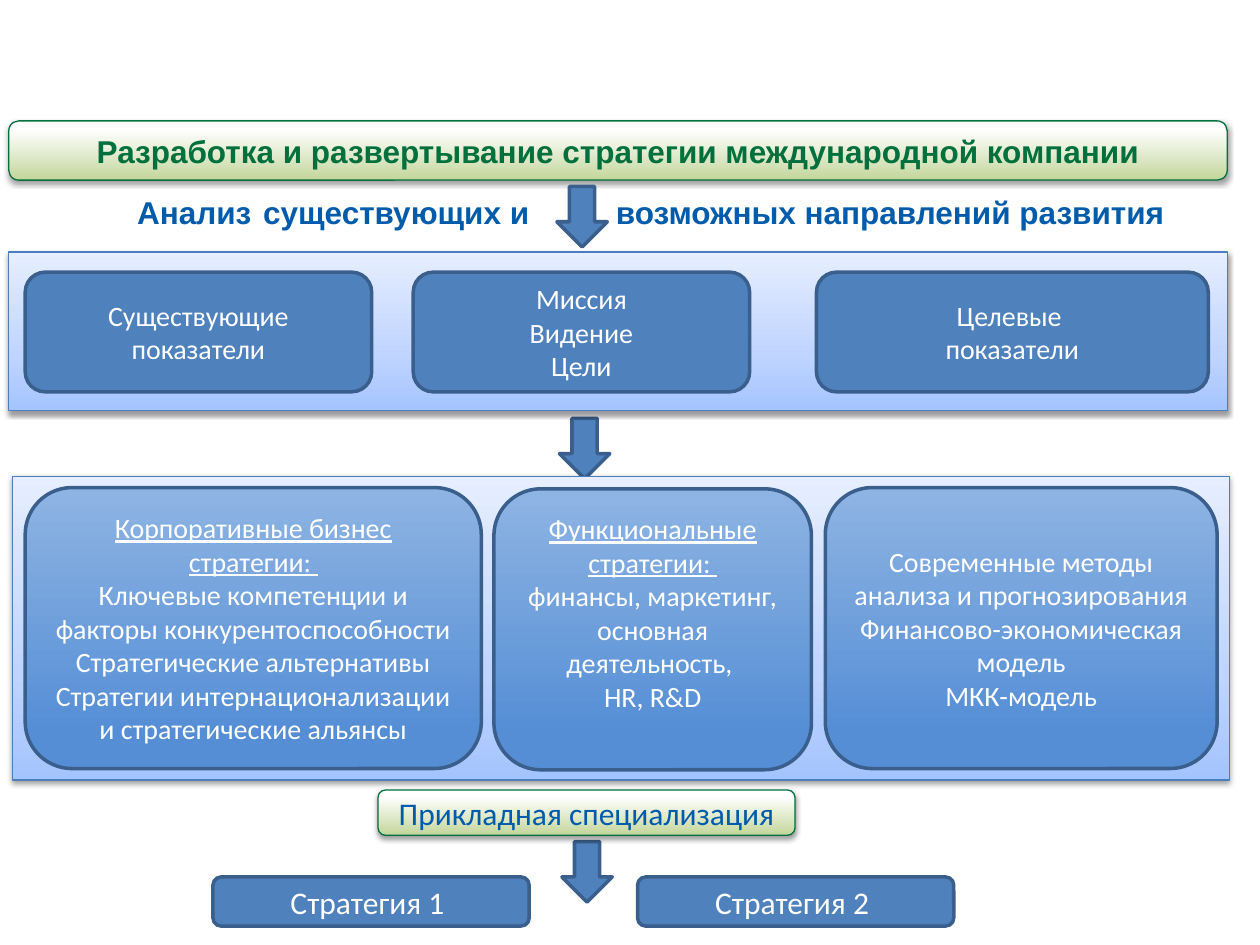
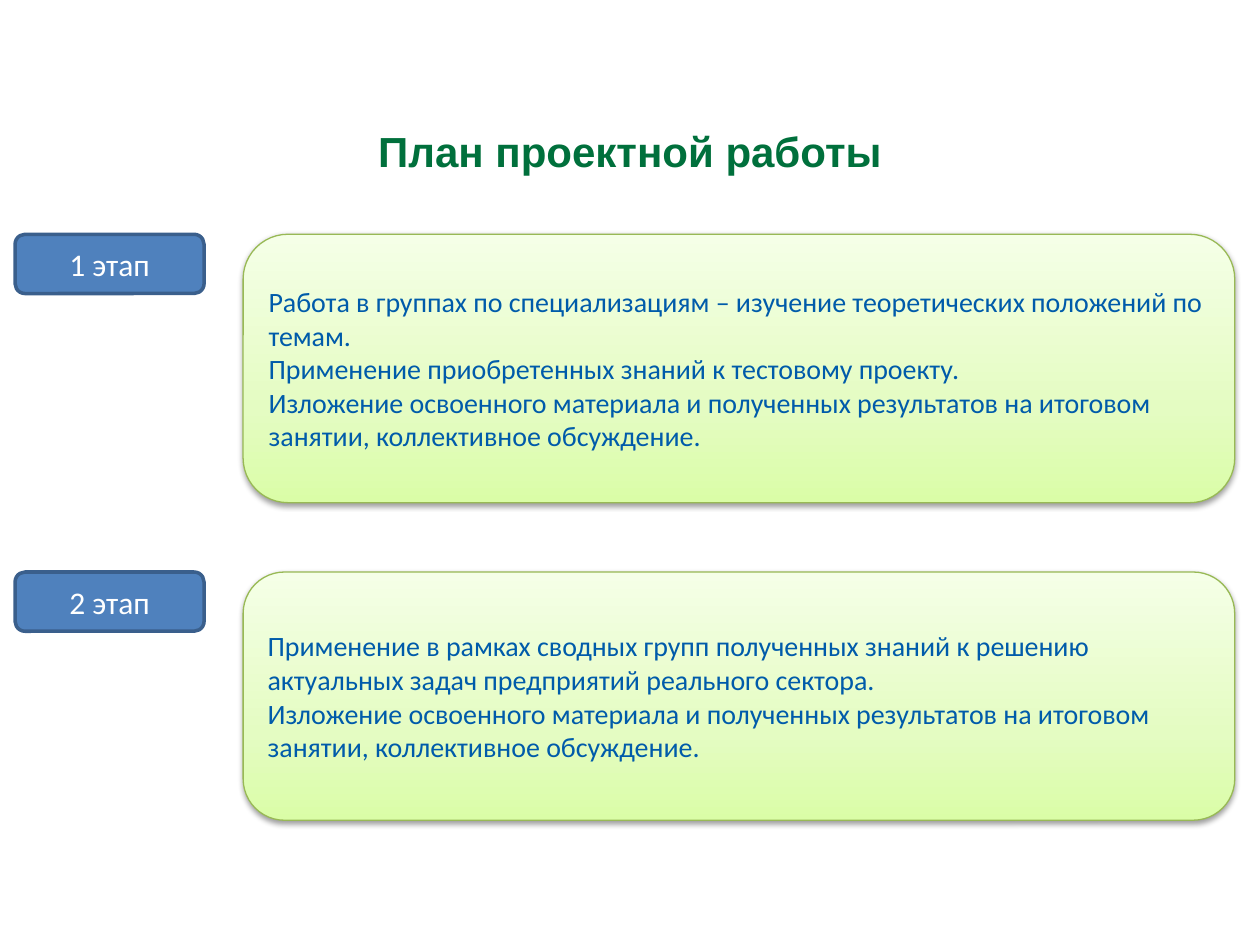
from dataclasses import dataclass

from lxml import etree
from pptx import Presentation
from pptx.dml.color import RGBColor
from pptx.enum import shapes, text
from pptx.oxml.ns import qn
from pptx.util import Inches, Pt


@dataclass(frozen=True)
class Theme:
    green: str = "00703C"
    blue: str = "005BAA"
    white: str = "FFFFFF"
    tile: str = "4F81BD"
    tile_edge: str = "3A5F8C"
    panel_edge: str = "4B7EBC"
    stage_edge: str = "98B955"
    shadow: str = "000000"
    # Gradients: stops as (percent, colour), then the angle
    panel: tuple = (((0, "A4C4FF"), (35, "BFD4FF"), (100, "E6EEFF")), 270)
    banner: tuple = (((0, "C3D69B"), (86, "FFFFFF")), 270)
    method: tuple = (((0, "8EB4E3"), (88, "558ED5")), 90)
    stage: tuple = (((0, "DAFDA7"), (35, "E4FCC2"), (100, "F5FFE7")), 270)
    heading_font: str = "Arial"
    body_font: str = "Calibri"
    title_size: int = 24
    label_size: int = 18
    body_size: int = 16
    thin: float = 0.75
    thick: float = 2


THEME = Theme()
SHAPE = shapes.MSO_SHAPE
CENTER, LEFT = text.PP_ALIGN.CENTER, text.PP_ALIGN.LEFT


# --- Fill, shadow and text ---
def paint_gradient(shape, gradient):
    stops, angle = gradient
    shape.fill.gradient()
    fill = shape._element.spPr.find(qn("a:gradFill"))
    for child in list(fill):
        fill.remove(child)
    stop_list = etree.SubElement(fill, qn("a:gsLst"))
    for percent, color in stops:
        stop = etree.SubElement(stop_list, qn("a:gs"), pos=str(percent * 1000))
        etree.SubElement(stop, qn("a:srgbClr"), val=color)
    etree.SubElement(fill, qn("a:lin"), ang=str(angle * 60000), scaled="0")


def cast_shadow(shape):
    effects = shape._element.spPr.find(qn("a:effectLst"))
    outer = etree.SubElement(effects, qn("a:outerShdw"), blurRad=str(Pt(3.1)),
                             dist=str(Pt(1.6)), dir="5400000", rotWithShape="0")
    color = etree.SubElement(outer, qn("a:srgbClr"), val=THEME.shadow)
    etree.SubElement(color, qn("a:alpha"), val="38000")


def write(shape, lines, size, color, font=THEME.body_font, bold=False,
          align=CENTER, underline_first=False):
    frame = shape.text_frame
    frame.word_wrap = True
    for index, line in enumerate(lines):
        paragraph = frame.paragraphs[0] if index == 0 else frame.add_paragraph()
        paragraph.add_run().text = line
        paragraph.alignment = align
        paragraph.font.name = font
        paragraph.font.size = Pt(size)
        paragraph.font.bold = bold
        paragraph.font.underline = underline_first and index == 0
        paragraph.font.color.rgb = RGBColor.from_string(color)


# --- Kinds of element ---
def block(slide, kind, box, fill, edge, width, shadow=False):
    shape = slide.shapes.add_shape(kind, *map(Inches, box))
    shape.shadow.inherit = False
    if isinstance(fill, str):
        shape.fill.solid()
        shape.fill.fore_color.rgb = RGBColor.from_string(fill)
    else:
        paint_gradient(shape, fill)
    shape.line.color.rgb = RGBColor.from_string(edge)
    shape.line.width = Pt(width)
    if shadow:
        cast_shadow(shape)
    shape.text_frame.vertical_anchor = text.MSO_ANCHOR.MIDDLE
    return shape


def panel(slide, box):
    block(slide, SHAPE.RECTANGLE, box, THEME.panel, THEME.panel_edge,
          THEME.thin, shadow=True)


def banner(slide, box, label, **style):
    shape = block(slide, SHAPE.ROUNDED_RECTANGLE, box, THEME.banner,
                  THEME.green, THEME.thin, shadow=True)
    write(shape, [label], THEME.label_size, **style)


def tile(slide, box, lines, size=THEME.label_size, fill=THEME.tile,
         underline_first=False):
    shape = block(slide, SHAPE.ROUNDED_RECTANGLE, box, fill,
                  THEME.tile_edge, THEME.thick)
    write(shape, lines, size, THEME.white, underline_first=underline_first)
    return shape


def down_arrow(slide, left, top):
    block(slide, SHAPE.DOWN_ARROW, (left, top, 0.4, 0.48), THEME.tile,
          THEME.tile_edge, THEME.thick)


def heading(slide, box, label, size, color, align):
    shape = slide.shapes.add_textbox(*map(Inches, box))
    write(shape, [label], size, color, THEME.heading_font, True, align)


def stage(slide, top, height, label, tasks):
    tile(slide, (0.12, top, 1.5, 0.47), [label])
    card = block(slide, SHAPE.ROUNDED_RECTANGLE, (1.93, top, 7.87, height),
                 THEME.stage, THEME.stage_edge, THEME.thin, shadow=True)
    write(card, tasks, THEME.body_size, THEME.blue, align=LEFT)


# --- Slides ---
def strategy_slide(slide):
    banner(slide, (0.07, 0.96, 9.67, 0.47),
           "Разработка и развертывание стратегии международной компании",
           color=THEME.green, font=THEME.heading_font, bold=True)

    # Analysis heading, split around the first arrow
    for left, width, words in ((0.99, 3.43, "Анализ\tсуществующих и"),
                               (4.79, 4.87, "возможных направлений развития")):
        heading(slide, (left, 1.48, width, 0.4), words, THEME.label_size,
                THEME.blue, LEFT)
    for left, top in ((4.42, 1.48), (4.44, 3.32), (4.46, 6.68)):
        down_arrow(slide, left, top)

    # Indicators and goals
    panel(slide, (0.07, 2, 9.67, 1.26))
    for left, width, lines in (
            (0.2, 2.75, ["Существующие показатели"]),
            (3.28, 2.67, ["Миссия", "Видение", "Цели"]),
            (6.48, 3.11, ["Целевые ", "показатели"])):
        tile(slide, (left, 2.16, width, 0.95), lines, THEME.body_size)

    # Strategies and methods
    panel(slide, (0.1, 3.78, 9.66, 2.41))
    corporate = ["Корпоративные бизнес стратегии: ",
                 "Ключевые компетенции и факторы конкурентоспособности",
                 "Стратегические альтернативы",
                 "Стратегии интернационализации и стратегические альянсы"]
    functional = ["Функциональные стратегии: ",
                  "финансы, маркетинг, основная деятельность, ",
                  "HR, R&D"]
    methods = ["Современные методы анализа и прогнозирования ",
               "Финансово-экономическая модель", "МКК-модель"]
    for left, top, width, lines, titled, bottom_inset in (
            (0.2, 3.87, 3.62, corporate, True, 0.05),
            (3.92, 3.88, 2.52, functional, True, 0.32),
            (6.55, 3.87, 3.11, methods, False, 0.05)):
        card = tile(slide, (left, top, width, 2.23), lines, THEME.body_size,
                    THEME.method, underline_first=titled)
        card.text_frame.margin_bottom = Inches(bottom_inset)

    # Specialisation
    banner(slide, (3, 6.27, 3.31, 0.36), "Прикладная специализация",
           color=THEME.blue)
    for number, left in enumerate((1.69, 5.06), start=1):
        tile(slide, (left, 6.96, 2.51, 0.39), [f"Стратегия {number} "])


def plan_slide(slide):
    heading(slide, (0, 0.95, 10, 0.5), "План проектной работы",
            THEME.title_size, THEME.green, CENTER)
    presentation_task = ("Изложение освоенного материала и полученных "
                         "результатов на итоговом занятии, "
                         "коллективное обсуждение.")
    stage(slide, 1.86, 2.13, "1 этап", [
        "Работа в группах по специализациям – изучение теоретических "
        "положений по темам.",
        "Применение приобретенных знаний к тестовому проекту.",
        presentation_task])
    stage(slide, 4.54, 1.97, "2 этап", [
        "Применение в рамках сводных групп полученных знаний к решению "
        "актуальных задач предприятий реального сектора.",
        presentation_task])


def main():
    deck = Presentation()
    deck.slide_width, deck.slide_height = Inches(10), Inches(7.5)
    blank = deck.slide_layouts[6]
    for build in (strategy_slide, plan_slide):
        build(deck.slides.add_slide(blank))
    deck.save("out.pptx")


if __name__ == "__main__":
    main()
